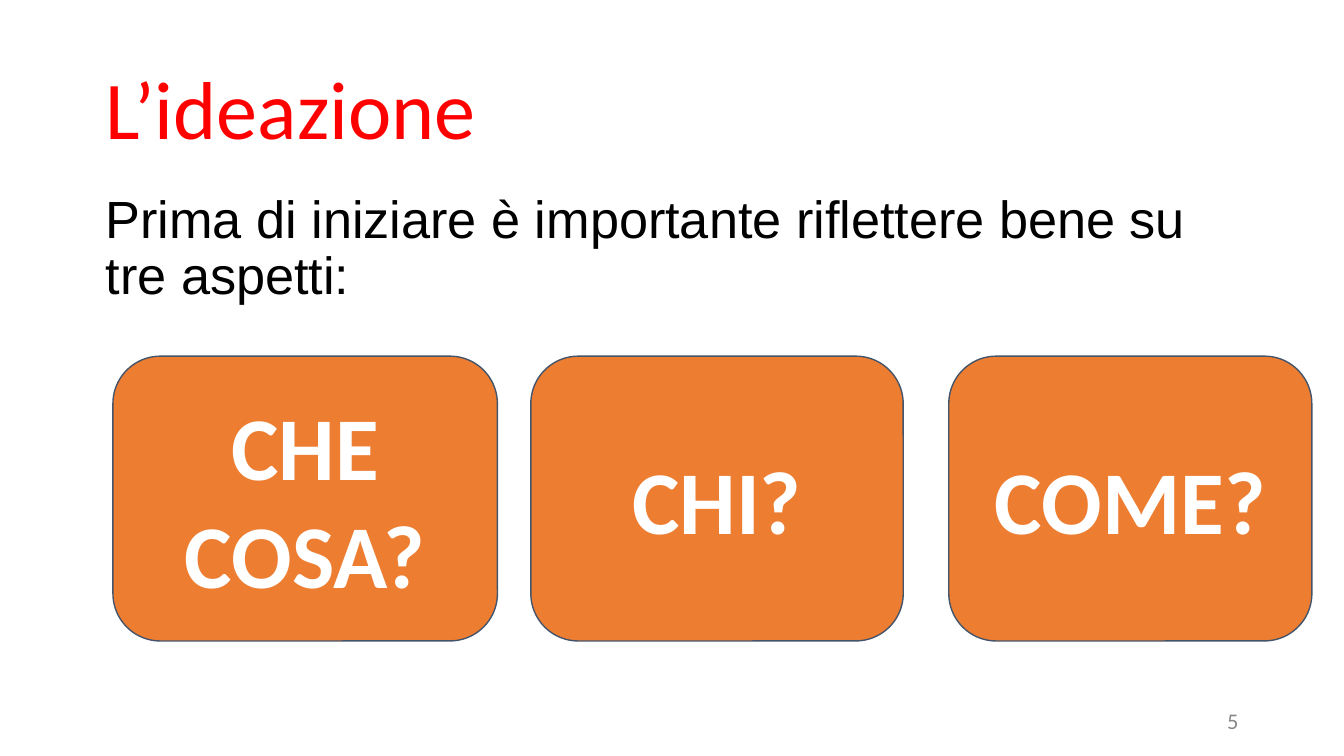
from dataclasses import dataclass

from pptx import Presentation
from pptx.dml.color import RGBColor
from pptx.enum.shapes import MSO_SHAPE
from pptx.enum.text import MSO_ANCHOR, PP_ALIGN
from pptx.shapes.base import BaseShape
from pptx.slide import Slide
from pptx.util import Pt

COLORS = {
    "title": "FF0000",
    "body": "000000",
    "number": "888888",
    "card": "ED7D31",
    "border": "44546A",
    "card_text": "FFFFFF",
}
CARD_LEFT, CARD_TOP, CARD_PITCH, CARD_HEIGHT = 60.5, 190.8, 223.9, 152.6


@dataclass
class Card:
    text: str
    width: float


CARDS = [Card("CHE COSA?", 206), Card("CHI?", 199.5), Card("COME?", 194.5)]


def rgb(name: str) -> RGBColor:
    return RGBColor.from_string(COLORS[name])


def write(sp: BaseShape, text: str, *, size: float, color: str,
          font: str = "Calibri", bold: bool = False,
          align: PP_ALIGN = PP_ALIGN.LEFT,
          anchor: MSO_ANCHOR = MSO_ANCHOR.MIDDLE,
          spacing: float = 1.0, inset: float = 3.6) -> None:
    """Fill a shape with one formatted paragraph; inset is top and bottom."""
    tf = sp.text_frame
    tf.word_wrap = True
    tf.vertical_anchor = anchor
    tf.margin_left = tf.margin_right = Pt(7.2)
    tf.margin_top = tf.margin_bottom = Pt(inset)
    p = tf.paragraphs[0]
    p.alignment = align
    p.line_spacing = spacing
    r = p.add_run()
    r.text = text
    r.font.name = font
    r.font.size = Pt(size)
    r.font.bold = bold
    r.font.color.rgb = rgb(color)


def add_text_box(s: Slide, left: float, top: float,
                 width: float, height: float) -> BaseShape:
    return s.shapes.add_textbox(Pt(left), Pt(top), Pt(width), Pt(height))


def add_card(s: Slide, card: Card, left: float) -> None:
    sp = s.shapes.add_shape(MSO_SHAPE.ROUNDED_RECTANGLE, Pt(left), Pt(CARD_TOP),
                            Pt(card.width), Pt(CARD_HEIGHT))
    sp.shadow.inherit = False
    sp.fill.solid()
    sp.fill.fore_color.rgb = rgb("card")
    sp.line.color.rgb = rgb("border")
    sp.line.width = Pt(0.75)
    write(sp, card.text, size=48, color="card_text", bold=True,
          align=PP_ALIGN.CENTER, inset=7.2)


def main() -> None:
    prs = Presentation()
    prs.slide_width, prs.slide_height = Pt(720), Pt(405)
    s = prs.slides.add_slide(prs.slide_layouts[6])

    write(add_text_box(s, 49.5, 21.6, 621, 78.3), "L’ideazione",
          size=44, color="title", spacing=0.9)
    write(add_text_box(s, 49.5, 100, 603, 257),
          "Prima di iniziare è importante riflettere bene su tre aspetti:",
          size=28, color="body", font="Arial", anchor=MSO_ANCHOR.TOP, spacing=0.9)
    write(add_text_box(s, 508.5, 375.4, 162, 21.6), "5",
          size=12, color="number", align=PP_ALIGN.RIGHT)
    for i, card in enumerate(CARDS):
        add_card(s, card, CARD_LEFT + i * CARD_PITCH)

    prs.save("out.pptx")


if __name__ == "__main__":
    main()
